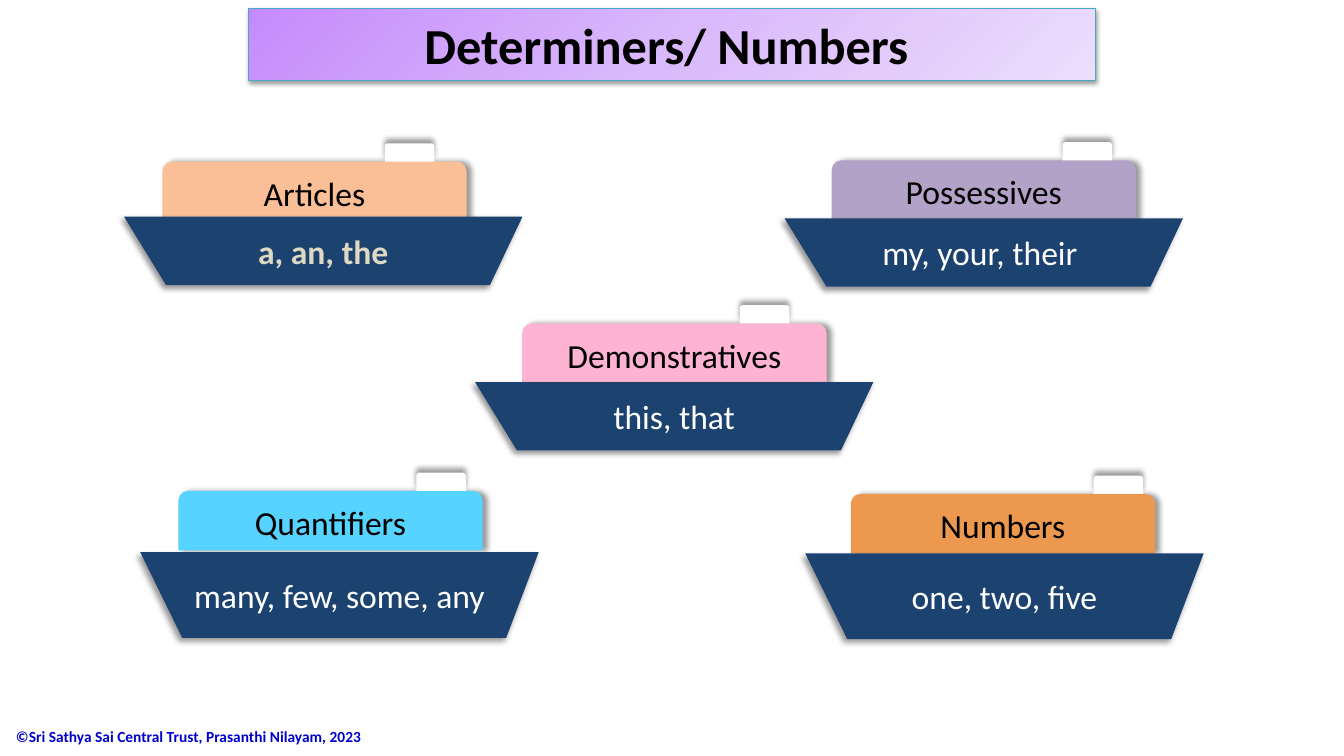
from dataclasses import dataclass

from lxml import etree
from pptx import Presentation
from pptx import util as u
from pptx.dml.color import RGBColor
from pptx.enum import shapes, text
from pptx.oxml import parse_xml
from pptx.oxml.ns import nsdecls, qn

Pt = u.Pt

COLOURS = {
    "black": "000000",
    "white": "FFFFFF",
    "cream": "DDD9C3",
    "navy": "1C4270",
    "credit": "0000CC",
    "pink": "FDB3D1",
    "lilac": "B3A2C7",
    "sky": "57D3FF",
    "orange": "ED984F",
    "peach": "FBBF97",
    "title_line": "46AAC5",
}
TITLE_STOPS = ((0, "C58BFB"), (50, "D9B9FB"), (100, "ECDDFC"))

CABIN_WIDTH, CABIN_HEIGHT = 217.4, 42.5
FUNNEL_WIDTH, FUNNEL_HEIGHT = 35.3, 13
HULL_WIDTH, KEEL_START, KEEL_END = 284.6, 30, 261.4


@dataclass(frozen=True)
class Boat:
    category: str
    examples: str
    colour: str
    cabin_left: float
    cabin_top: float
    funnel_offset: float
    hull_left: float
    hull_top: float
    hull_height: float = 48.8
    examples_colour: str = "white"
    examples_bold: bool = False


BOATS = (
    Boat("Demonstratives", "this, that", "pink", 373, 231, 155.5, 339.3, 272.9),
    Boat("Possessives", "my, your, their ", "lilac", 594, 114.5, 165, 560.4, 156),
    Boat("Quantifiers", "many, few, some, any", "sky", 127.4, 350.6, 170, 100.2, 394.4, 61.2),
    Boat("Numbers", "one, two, five", "orange", 607.7, 352.8, 173.5, 575.2, 395.3, 61.2),
    Boat("Articles", "a, an, the", "peach", 115.9, 115.4, 159, 88.6, 154.8,
         examples_colour="cream", examples_bold=True),
)


def rgb(name: str) -> RGBColor:
    return RGBColor.from_string(COLOURS[name])


def add_shadow(shape, direction: int, blur: float = 4, distance: float = 3, alpha: int = 40) -> None:
    shape.shadow.inherit = False
    effects = shape._element.spPr.find(qn("a:effectLst"))
    shadow = etree.SubElement(
        effects, qn("a:outerShdw"), blurRad=str(Pt(blur)), dist=str(Pt(distance)),
        dir=str(direction * 60000), algn="ctr", rotWithShape="0")
    colour = etree.SubElement(shadow, qn("a:srgbClr"), val=COLOURS["black"])
    etree.SubElement(colour, qn("a:alpha"), val=str(alpha * 1000))


def paint(shape, colour: str, shadow_direction: int) -> None:
    shape.fill.solid()
    shape.fill.fore_color.rgb = rgb(colour)
    shape.line.fill.background()
    add_shadow(shape, shadow_direction)


def write(shape, words: str, size: float, colour: str, bold: bool = False,
          alignment=text.PP_ALIGN.CENTER):
    frame = shape.text_frame
    frame.word_wrap = True
    frame.vertical_anchor = text.MSO_ANCHOR.MIDDLE
    paragraph = frame.paragraphs[0]
    paragraph.alignment = alignment
    run = paragraph.add_run()
    run.text = words
    run.font.name = "Calibri"
    run.font.size = Pt(size)
    run.font.bold = bold
    run.font.color.rgb = rgb(colour)
    return paragraph


def add_credit(slide) -> None:
    box = slide.shapes.add_textbox(Pt(-31.7), Pt(511.2), Pt(306.7), Pt(29.5))
    paragraph = write(box, "©Sri Sathya Sai Central Trust, Prasanthi Nilayam, 2023",
                      11, "credit", True, text.PP_ALIGN.LEFT)
    paragraph._p.get_or_add_pPr().set("marL", str(Pt(36)))


def add_cabin(slide, boat: Boat) -> None:
    group = slide.shapes.add_group_shape()
    preset = shapes.MSO_SHAPE.ROUND_2_SAME_RECTANGLE
    cabin = group.shapes.add_shape(
        preset, Pt(boat.cabin_left), Pt(boat.cabin_top), Pt(CABIN_WIDTH), Pt(CABIN_HEIGHT))
    paint(cabin, boat.colour, 0)
    write(cabin, boat.category, 24, "black")
    funnel = group.shapes.add_shape(
        preset, Pt(boat.cabin_left + boat.funnel_offset), Pt(boat.cabin_top - FUNNEL_HEIGHT),
        Pt(FUNNEL_WIDTH), Pt(FUNNEL_HEIGHT))
    paint(funnel, "white", 270)


def add_hull(slide, boat: Boat) -> None:
    left, top = boat.hull_left, boat.hull_top
    bottom = top + boat.hull_height
    builder = slide.shapes.build_freeform(Pt(left), Pt(top))
    builder.add_line_segments((
        (Pt(left + HULL_WIDTH), Pt(top)),
        (Pt(left + KEEL_END), Pt(bottom)),
        (Pt(left + KEEL_START), Pt(bottom)),
    ), close=True)
    hull = builder.convert_to_shape()
    paint(hull, "navy", 135)
    write(hull, boat.examples, 24, boat.examples_colour, boat.examples_bold)


def add_title(slide) -> None:
    title = slide.shapes.add_shape(
        shapes.MSO_SHAPE.RECTANGLE, Pt(177.8), Pt(5.8), Pt(604.8), Pt(51.8))
    title.line.color.rgb = rgb("title_line")
    title.line.width = Pt(0.75)
    add_shadow(title, 90, 3.1, 1.6, 38)
    stops = "".join(f'<a:gs pos="{position * 1000}"><a:srgbClr val="{colour}"/></a:gs>'
                    for position, colour in TITLE_STOPS)
    gradient = parse_xml(
        f'<a:gradFill {nsdecls("a")} rotWithShape="1"><a:gsLst>{stops}</a:gsLst>'
        '<a:path path="circle"><a:fillToRect r="100000" b="100000"/></a:path></a:gradFill>')
    title._element.spPr.find(qn("a:prstGeom")).addnext(gradient)
    write(title, "Determiners/ Numbers ", 36, "black", True)


def main() -> None:
    presentation = Presentation()
    presentation.slide_width = Pt(960)
    presentation.slide_height = Pt(540)
    slide = presentation.slides.add_slide(presentation.slide_layouts[6])
    add_credit(slide)
    for boat in BOATS:
        add_cabin(slide, boat)
    for boat in BOATS:
        add_hull(slide, boat)
    add_title(slide)
    presentation.save("out.pptx")


if __name__ == "__main__":
    main()
